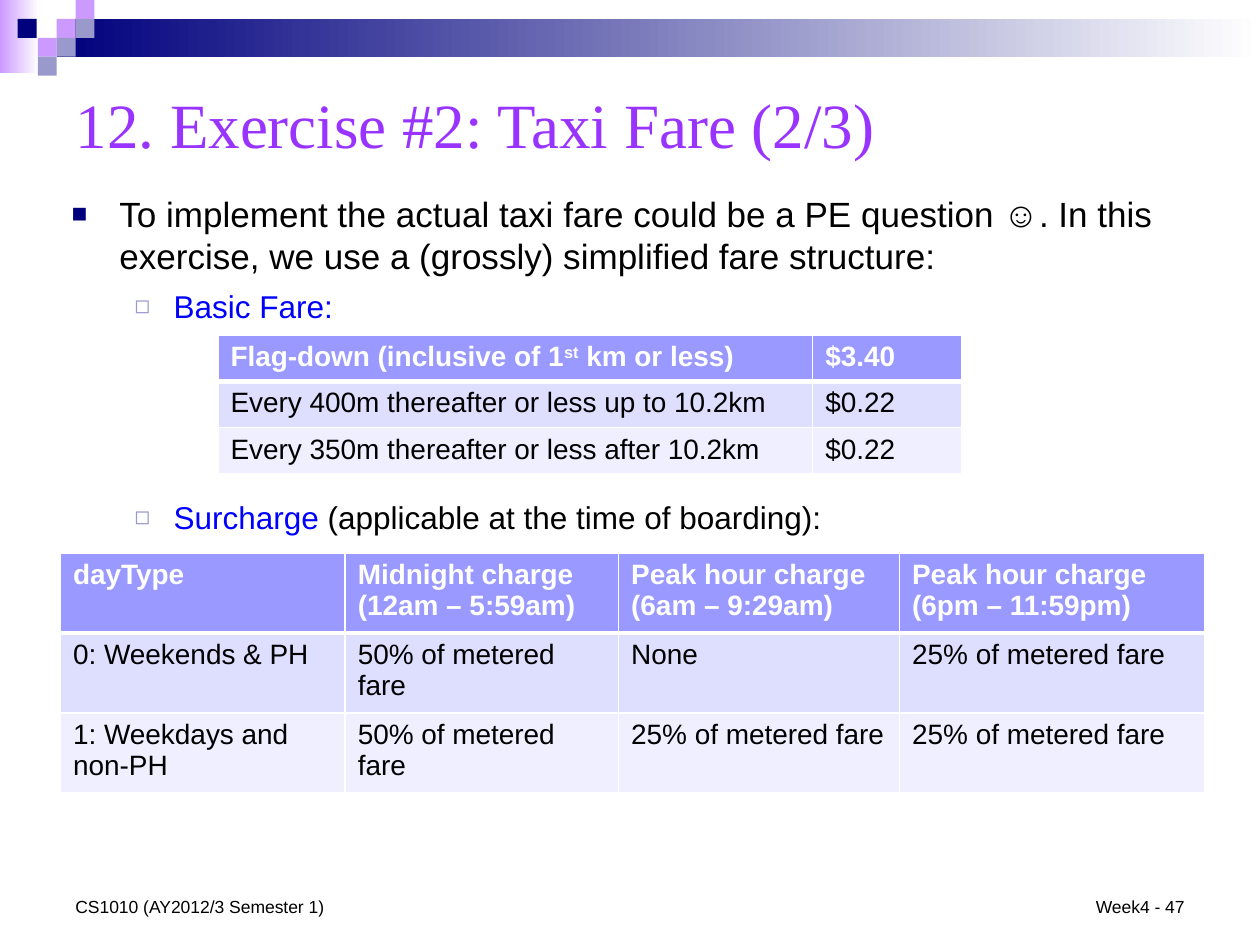
from dataclasses import dataclass
from lxml.etree import SubElement
from pptx import Presentation
from pptx.dml.color import RGBColor as RGB
from pptx.enum.shapes import MSO_SHAPE as Shape
from pptx.enum.text import MSO_ANCHOR as Anchor, MSO_AUTO_SIZE as AutoSize, PP_ALIGN as Align
from pptx.oxml import parse_xml
from pptx.oxml.ns import nsdecls, qn
from pptx.util import Inches, Pt


@dataclass(frozen=True)
class Theme:
    sans: str = "Arial"
    serif: str = "Times New Roman"
    title: str = "9933FF"
    text: str = "000000"
    white: str = "FFFFFF"
    term: str = "0000FF"
    navy: str = "00007D"
    lilac: str = "CC99FF"
    slate: str = "9999CC"
    row_fills: tuple = ("9999FF", "DEDEFF", "EFEFFF")
    title_size: int = 36
    lead_size: int = 20
    point_size: int = 18
    table_size: int = 16
    footer_size: int = 10


theme = Theme()


def add_run(paragraph, text, size, color, bold=False, font=theme.sans):
    run = paragraph.add_run()
    run.text = text
    run.font.name = font
    run.font.size = Pt(size)
    run.font.bold = bold
    run.font.color.rgb = RGB.from_string(color)
    return run


def add_fare_table(slide, left, top, widths, row_height, rows):
    table = slide.shapes.add_table(
        len(rows), len(widths), Inches(left), Inches(top),
        Inches(sum(widths)), Inches(row_height * len(rows))).table
    for column, width in zip(table.columns, widths):
        column.width = Inches(width)
    for r, texts in enumerate(rows):
        table.rows[r].height = Inches(row_height)
        header = r == 0
        for c, parts in enumerate(texts):
            cell = table.cell(r, c)
            cell.fill.solid()
            cell.fill.fore_color.rgb = RGB.from_string(theme.row_fills[r])
            for i, part in enumerate(parts.split("^")):
                run = add_run(cell.text_frame.paragraphs[0], part, theme.table_size,
                              theme.white if header else theme.text, header)
                if i == 1:
                    run.font._element.set("baseline", "30000")
            edges = {"L": 1, "R": 1, "T": 3 if r == 1 else 1, "B": 3 if header else 1}
            for i, (edge, weight) in enumerate(edges.items()):
                cell._tc.get_or_add_tcPr().insert(i, parse_xml(
                    f'<a:ln{edge} {nsdecls("a")} w="{Pt(weight)}"><a:solidFill>'
                    f'<a:srgbClr val="{theme.white}"/></a:solidFill></a:ln{edge}>'))


prs = Presentation()
prs.slide_width, prs.slide_height = Inches(10), Inches(7.5)
slide = prs.slides.add_slide(prs.slide_layouts[5])

bands = [(0, 0, 0.31, 0.58, theme.lilac), (0.45, 0.15, 9.55, 0.3, theme.navy)]
squares = [
    (0.45, 0.15, theme.lilac), (0.6, 0, theme.lilac), (0.6, 0.15, theme.slate),
    (0.3, 0.3, theme.lilac), (0.14, 0.15, theme.navy), (0.45, 0.3, theme.slate),
    (0.3, 0.45, theme.slate),
]
tiles = [(left, top, 0.15, 0.15, color) for left, top, color in squares]
for left, top, width, height, color in bands + tiles:
    block = slide.shapes.add_shape(
        Shape.RECTANGLE, Inches(left), Inches(top), Inches(width), Inches(height))
    block.shadow.inherit = False
    block.line.fill.background()
    if (left, top, width, height, color) in bands:
        block.fill.gradient()
        block.fill.gradient_angle = 0
        for stop, shade in zip(block.fill.gradient_stops, (color, theme.white)):
            stop.color.rgb = RGB.from_string(shade)
    else:
        block.fill.solid()
        block.fill.fore_color.rgb = RGB.from_string(color)

title = slide.shapes.title
title.left, title.top = Inches(0.5), Inches(0.5)
title.width, title.height = Inches(9.33), Inches(0.95)
title.text_frame.auto_size = AutoSize.NONE
title.text_frame.vertical_anchor = Anchor.MIDDLE
heading = title.text_frame.paragraphs[0]
heading.alignment = Align.LEFT
add_run(heading, "12. Exercise #2: Taxi Fare (2/3)", theme.title_size, theme.title,
        font=theme.serif)

lead = ("To implement the actual taxi fare could be a PE question ☺. In this exercise, "
        "we use a (grossly) simplified fare structure:")
points = [
    (0, 6, theme.lead_size, [(lead, theme.text)]),
    (1, 6, theme.point_size, [("Basic Fare:", theme.term)]),
    (1, 99, theme.point_size, [("Surcharge", theme.term),
                               (" (applicable at the time of boarding):", theme.text)]),
]
bullets = [(0.38, 0.38, "■", theme.navy, 75), (0.81, 0.31, "◻", theme.slate, 80)]
body = slide.shapes.add_textbox(
    Inches(0.47), Inches(1.48), Inches(9), Inches(2.83)).text_frame
body.word_wrap = True
for i, (level, space, size, runs) in enumerate(points):
    point = body.add_paragraph() if i else body.paragraphs[0]
    point.level = level
    point.space_before = Pt(space)
    for text, color in runs:
        add_run(point, text, size, color)
    margin, hanging, mark, mark_color, percent = bullets[level]
    props = point._p.get_or_add_pPr()
    props.set("marL", str(Inches(margin)))
    props.set("indent", str(-Inches(hanging)))
    SubElement(SubElement(props, qn("a:buClr")), qn("a:srgbClr")).set("val", mark_color)
    SubElement(props, qn("a:buSzPct")).set("val", str(percent * 1000))
    SubElement(props, qn("a:buFont")).set("typeface", theme.sans)
    SubElement(props, qn("a:buChar")).set("char", mark)

footers = [
    (7.17, 2.33, Align.RIGHT, "Week4 - 47"),
    (0.5, 3.17, Align.LEFT, "CS1010 (AY2012/3 Semester 1)"),
]
for left, width, alignment, text in footers:
    footer = slide.shapes.add_textbox(
        Inches(left), Inches(6.83), Inches(width), Inches(0.5)).text_frame
    footer.word_wrap = True
    footer.vertical_anchor = Anchor.BOTTOM
    footer.paragraphs[0].alignment = alignment
    add_run(footer.paragraphs[0], text, theme.footer_size, theme.text)

add_fare_table(slide, 1.73, 2.66, [4.72, 1.18], 0.35, [
    ("Flag-down (inclusive of 1^st^ km or less)", "$3.40"),
    ("Every 400m thereafter or less up to 10.2km", "$0.22"),
    ("Every 350m thereafter or less after 10.2km", "$0.22"),
])
add_fare_table(slide, 0.48, 4.39, [2.26, 2.17, 2.23, 2.42], 0.59, [
    ("dayType", "Midnight charge (12am – 5:59am)", "Peak hour charge (6am – 9:29am)",
     "Peak hour charge (6pm – 11:59pm)"),
    ("0: Weekends & PH", "50% of metered fare", "None", "25% of metered fare"),
    ("1: Weekdays and non-PH", "50% of metered fare", "25% of metered fare",
     "25% of metered fare"),
])

prs.save("out.pptx")
